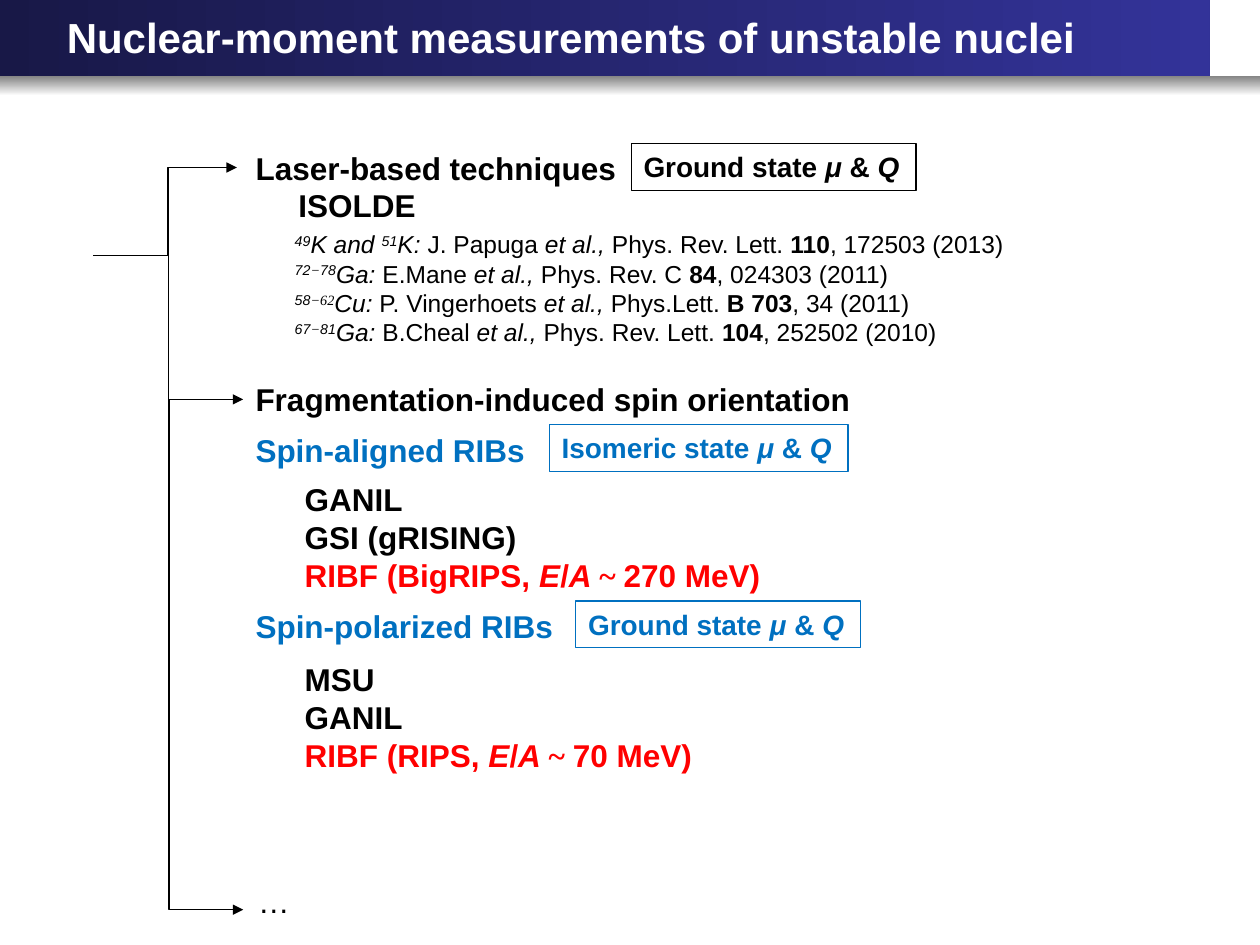
from dataclasses import dataclass

from lxml import etree
from pptx import Presentation
from pptx.dml.color import RGBColor
from pptx.enum.shapes import MSO_CONNECTOR, MSO_SHAPE
from pptx.enum.text import MSO_ANCHOR, PP_ALIGN
from pptx.oxml.ns import qn
from pptx.util import Inches, Pt

ELBOW = MSO_CONNECTOR.ELBOW
RECTANGLE = MSO_SHAPE.RECTANGLE
LEFT = PP_ALIGN.LEFT
TOP, MIDDLE = MSO_ANCHOR.TOP, MSO_ANCHOR.MIDDLE


@dataclass(frozen=True)
class Theme:
    font: str = "Arial"
    symbol_font: str = "Times New Roman"
    black: RGBColor = RGBColor(0x00, 0x00, 0x00)
    white: RGBColor = RGBColor(0xFF, 0xFF, 0xFF)
    blue: RGBColor = RGBColor(0x00, 0x70, 0xC0)
    red: RGBColor = RGBColor(0xFF, 0x00, 0x00)
    bar_dark: RGBColor = RGBColor(0x18, 0x18, 0x47)
    bar_light: RGBColor = RGBColor(0x33, 0x33, 0x99)
    gray: RGBColor = RGBColor(0x80, 0x80, 0x80)
    title: Pt = Pt(24)
    heading: Pt = Pt(18)
    label: Pt = Pt(16)
    reference: Pt = Pt(14)
    line: Pt = Pt(0.75)


THEME = Theme()

# Each run is (text, marks): b bold, i italic, ^ superscript, s symbol font
REFERENCES = [
    [("49", "i^"), ("K and ", "i"), ("51", "i^"), ("K: ", "i"), ("J. Papuga", ""),
     (" et al., ", "i"), ("Phys. Rev. Lett. ", ""), ("110", "b"), (", 172503 (2013)", "")],
    [("72", "i^"), ("−", "i^s"), ("78", "i^"), ("Ga: ", "i"), ("E.Mane", ""),
     (" et al., ", "i"), ("Phys. Rev. C ", ""), ("84", "b"), (", 024303 (2011)", "")],
    [("58", "i^"), ("−62", "i^s"), ("Cu: ", "i"), ("P. Vingerhoets ", ""),
     ("et al., ", "i"), ("Phys.Lett. ", ""), ("B 703", "b"), (", 34 (2011)", "")],
    [("67", "i^"), ("−", "i^s"), ("81", "i^"), ("Ga: ", "i"), ("B.Cheal ", ""),
     ("et al., ", "i"), ("Phys. Rev. Lett. ", ""), ("104", "b"), (", 252502 (2010)", "")],
]


def beam_energy(separator, energy):
    return [(f"RIBF ({separator}, ", ""), ("E", "i"), ("/", ""), ("A ", "i"),
            ("~ ", "s"), (f"{energy} MeV)", "")]


# Text helpers
def write_paragraph(paragraph, runs, size, color, bold=True):
    paragraph.alignment = LEFT
    font = paragraph.font
    font.name, font.size, font.bold = THEME.font, size, bold
    font.color.rgb = color
    for text, marks in [(runs, "")] if isinstance(runs, str) else runs:
        run = paragraph.add_run()
        run.text = text
        if "b" in marks:
            run.font.bold = True
        if "i" in marks:
            run.font.italic = True
        if "s" in marks:
            run.font.name = THEME.symbol_font
        if "^" in marks:
            run.font._element.set("baseline", "30000")


def add_text(slide, left, top, width, height, lines, size, color=THEME.black, bold=True):
    """Write lines in a text box; a line is (runs, color) or just its runs."""
    box = slide.shapes.add_textbox(Inches(left), Inches(top), Inches(width), Inches(height))
    frame = box.text_frame
    for index, line in enumerate(lines):
        runs, line_color = line if isinstance(line, tuple) else (line, color)
        paragraph = frame.add_paragraph() if index else frame.paragraphs[0]
        write_paragraph(paragraph, runs, size, line_color, bold)
    return frame


def add_state_label(slide, left, top, width, state, color):
    label = slide.shapes.add_shape(
        RECTANGLE, Inches(left), Inches(top), Inches(width), Inches(0.37))
    label.shadow.inherit = False
    label.fill.background()
    label.line.color.rgb, label.line.width = color, THEME.line
    frame = label.text_frame
    frame.word_wrap, frame.vertical_anchor = False, TOP
    runs = [(f"{state} state ", ""), ("μ", "i"), (" & ", ""), ("Q", "i")]
    write_paragraph(frame.paragraphs[0], runs, THEME.label, color)


# Header: gradient bar, soft edge below it, title
def add_gradient_bar(slide, left, top, width, height, colors, angle):
    bar = slide.shapes.add_shape(
        RECTANGLE, Inches(left), Inches(top), Inches(width), Inches(height))
    bar.shadow.inherit = False
    bar.line.fill.background()
    bar.fill.gradient()
    bar.fill.gradient_angle = angle
    for stop, color in zip(bar.fill.gradient_stops, colors):
        stop.color.rgb = color


def add_header(slide, left, top, width, height):
    add_gradient_bar(slide, left, top, width - 0.4, height,
                     (THEME.bar_dark, THEME.bar_light), 0)
    add_gradient_bar(slide, left, top + height, width, 0.16, (THEME.gray, THEME.white), 270)
    title = slide.shapes.title
    title.left, title.top = Inches(left + 0.43), Inches(top + 0.04)
    title.width, title.height = Inches(8.28), Inches(0.5)
    title.text_frame.word_wrap = False
    title.text_frame.vertical_anchor = MIDDLE
    write_paragraph(title.text_frame.paragraphs[0],
                    "Nuclear-moment measurements of unstable nuclei", THEME.title, THEME.white)
    # Bring the title in front of the bars
    slide.shapes._spTree.append(title._element)


# Branches leading to each technique
def add_branch(slide, start, end, bend):
    """Draw an elbow arrow that turns at the given share of its width."""
    branch = slide.shapes.add_connector(ELBOW, *map(Inches, start + end))
    branch.line.color.rgb, branch.line.width = THEME.black, THEME.line
    properties = branch._element.spPr
    guides = properties.find(qn("a:prstGeom")).get_or_add_avLst()
    etree.SubElement(guides, qn("a:gd"), name="adj1", fmla=f"val {round(bend * 100000)}")
    etree.SubElement(properties.find(qn("a:ln")), qn("a:tailEnd"), type="triangle")
    etree.SubElement(properties, qn("a:effectLst"))


def add_branches(slide, left, top):
    root = (left, top)
    trunk, tip = left + 0.6, left + 1.19
    add_branch(slide, root, (left + 1.14, top - 0.7), 0.52)
    add_branch(slide, root, (tip, top + 1.14), 0.5)
    add_branch(slide, (trunk, top + 1.14), (tip, top + 5.19), 0)


# Laser-based techniques with references
def add_laser_techniques(slide, left, top):
    frame = add_text(slide, left, top, 3.09, 0.71,
                     ["Laser-based techniques", "ISOLDE"], THEME.heading)
    frame.paragraphs[1]._p.get_or_add_pPr().set("marL", str(Inches(0.34)))
    add_text(slide, left + 0.31, top + 0.64, 5.89, 1.04, REFERENCES,
             THEME.reference, bold=False)
    add_state_label(slide, left + 3.08, top + 0.01, 2.26, "Ground", THEME.black)


# Fragmentation-induced orientation: one group per kind of beam
def add_beam_group(slide, left, top, name, width, state, label_box, facilities, gap):
    add_text(slide, left, top, width, 0.4, [name], THEME.heading, THEME.blue)
    label_left, label_width = label_box
    add_state_label(slide, left + label_left, top, label_width, state, THEME.blue)
    add_text(slide, left + 0.39, top + gap, 3.85, 1.01, facilities, THEME.heading)


def add_fragmentation(slide, left, top):
    add_text(slide, left, top, 4.97, 0.4,
             ["Fragmentation-induced spin orientation"], THEME.heading)
    add_beam_group(slide, left, top + 0.4, "Spin-aligned RIBs", 2.36, "Isomeric", (2.43, 2.37),
                   ["GANIL", "GSI (gRISING)", (beam_energy("BigRIPS", 270), THEME.red)], 0.39)
    add_beam_group(slide, left, top + 1.8, "Spin-polarized RIBs", 2.59, "Ground", (2.64, 2.26),
                   ["MSU", "GANIL", (beam_energy("RIPS", 70), THEME.red)], 0.42)


def main():
    presentation = Presentation()
    presentation.slide_width, presentation.slide_height = Inches(10), Inches(7.5)
    slide = presentation.slides.add_slide(presentation.slide_layouts[5])
    add_header(slide, 0, 0, 10, 0.6)
    add_branches(slide, 0.74, 2.03)
    add_laser_techniques(slide, 1.93, 1.13)
    add_fragmentation(slide, 1.93, 2.97)
    add_text(slide, 1.95, 6.95, 0.45, 0.4, ["…"], THEME.heading, bold=False)
    presentation.save("out.pptx")


if __name__ == "__main__":
    main()
